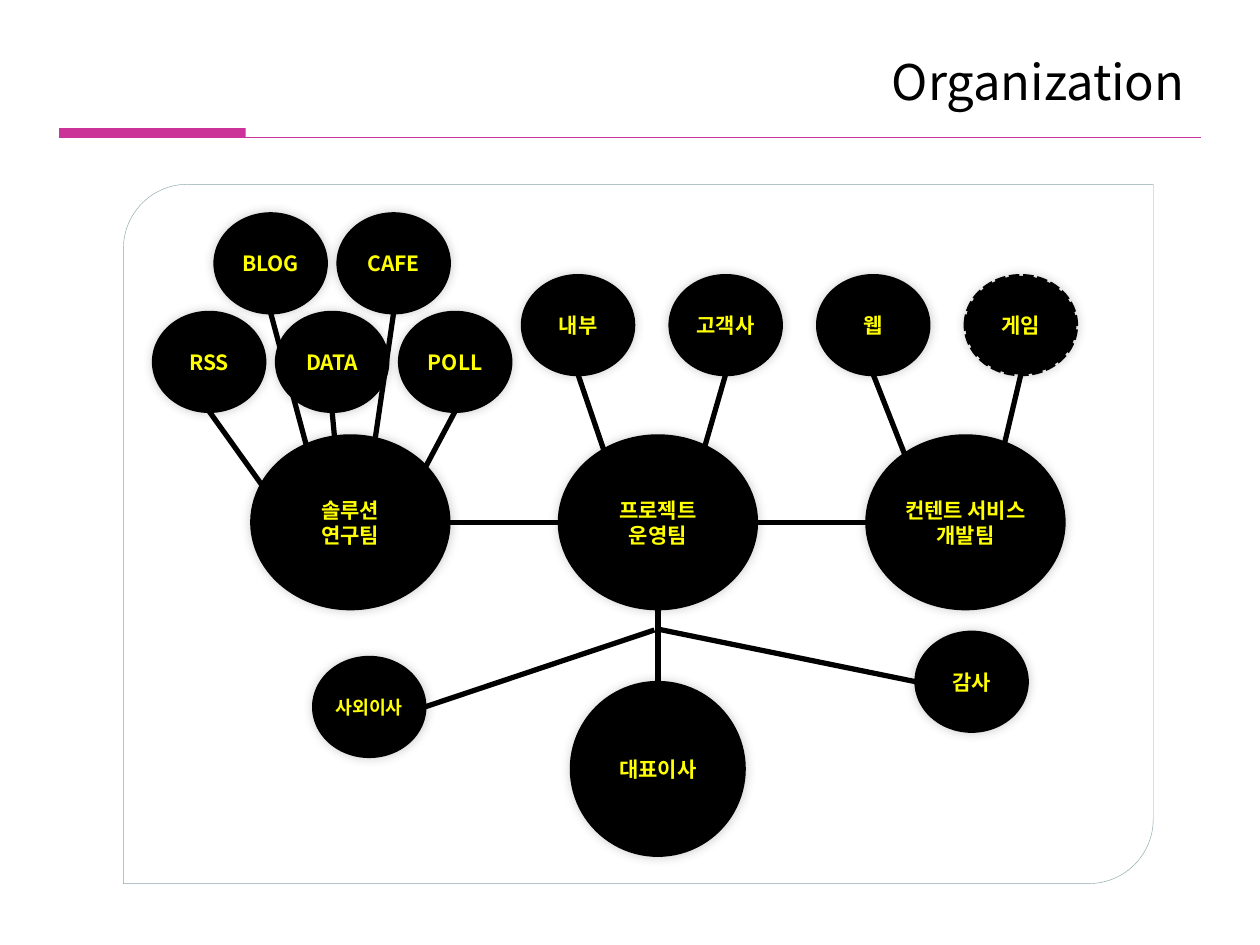
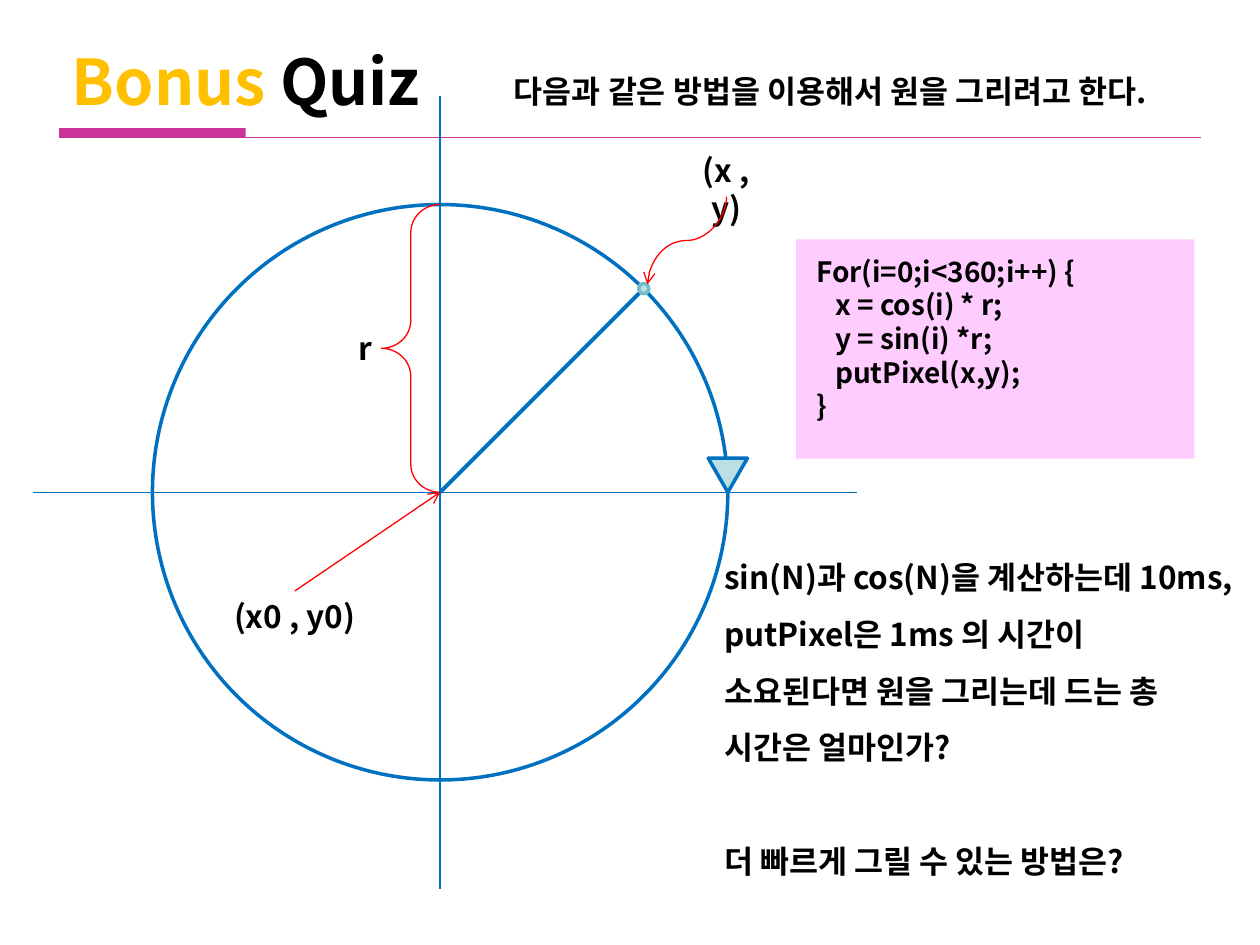
from lxml import etree
from pptx import Presentation
from pptx.dml.color import RGBColor
from pptx.enum.dml import MSO_LINE
from pptx.enum.shapes import MSO_CONNECTOR, MSO_SHAPE
from pptx.enum.text import MSO_ANCHOR, MSO_AUTO_SIZE, PP_ALIGN
from pptx.oxml.ns import qn
from pptx.util import Pt

OVAL, RECT = MSO_SHAPE.OVAL, MSO_SHAPE.RECTANGLE
STRAIGHT, CURVE = MSO_CONNECTOR.STRAIGHT, MSO_CONNECTOR.CURVE
LEFT, CENTER, RIGHT = PP_ALIGN.LEFT, PP_ALIGN.CENTER, PP_ALIGN.RIGHT
TOP, MIDDLE = MSO_ANCHOR.TOP, MSO_ANCHOR.MIDDLE
TITLE_ONLY = 5
FONT = "Noto Sans CJK KR"
COLORS = {
    "black": "000000", "white": "FFFFFF", "magenta": "CC3399", "panel": "8AA6A8",
    "yellow": "FFFF00", "blue": "0070C0", "pale": "BBE0E3", "teal": "72BFC5",
    "red": "FF0000", "pink": "FFCCFF", "gold": "FFC000",
}

# Organization: teams with their members, as (name, centre x, centre y)
TEAM_SIZE, MEMBER_SIZE, CHIEF_SIZE = (112.5, 98.6), (63.4, 56.4), (98.6, 98.6)
TEAM_X, TEAM_GAP, TEAM_Y = 200.2, 175.75, 298.5
SOLUTION_X, SOLUTION_GAP = 119.5, 70.3
BRANCH_X, BRANCH_GAP, BRANCH_Y = 330.3, 84.35, 185.8
TEAMS = [
    (["솔루션", "연구팀"], [
        (name, SOLUTION_X + step * SOLUTION_GAP, y) for name, step, y in [
            ("RSS", 0, 206.8), ("DATA", 1, 206.8), ("POLL", 2, 206.8),
            ("BLOG", 0.5, 150.5), ("CAFE", 1.5, 150.5)]]),
    (["프로젝트", "운영팀"], [
        (name, BRANCH_X + step * BRANCH_GAP, BRANCH_Y)
        for step, name in enumerate(["내부", "고객사"])]),
    (["컨텐트 서비스", "개발팀"], [
        (name, BRANCH_X + step * BRANCH_GAP, BRANCH_Y)
        for step, name in enumerate(["웹", "게임"], 2)]),
]
PLANNED = "게임"
CHIEF = ("대표이사", 375.9, 439.4)
OUTSIDE_DIRECTOR = ("사외이사", 211, 404)
AUDITOR = ("감사", 555.2, 389.6)
JUNCTION_Y = 359.5

# Quiz: the circle and the texts around it
CENTER_X, CENTER_Y, RADIUS = 251.5, 281.3, 164.4
POINT = (367.9, 164.9)
CODE = [("For(i=0;i<360;i++) {", 0), ("x = cos(i) * r;", 1), ("y = sin(i) *r;", 1),
        ("putPixel(x,y);", 1), ("}", 0)]
CODE_INDENT = 10.8
QUESTIONS = [
    "sin(N)과 cos(N)을 계산하는데 10ms, putPixel은 1ms 의 시간이 소요된다면 "
    "원을 그리는데 드는 총 시간은 얼마인가?",
    "더 빠르게 그릴 수 있는 방법은?",
]
LABELS = [
    (["다음과 같은 방법을 이용해서 원을 그리려고 한다."], (286.6, 37.4, 396, 51), {}),
    (["r"], (198, 184.3, 21, 29), {}),
    (["(x , y)"], (385.2, 82.8, 59.8, 29), {"align": CENTER}),
    (["(x0 , y0)"], (113, 337.7, 110.9, 29), {"align": CENTER}),
    (QUESTIONS, (406.8, 304.6, 306.7, 203.8), {"spacing": 1.5, "gap": 32.5}),
]


def color(name):
    return RGBColor.from_string(COLORS[name])


def write(shape, paragraphs, size=18, ink="black", bold=True, align=LEFT,
          anchor=TOP, wrap=True, spacing=None, gap=0):
    """Fill a shape with paragraphs: strings, or lists of (text, colour) spans."""
    frame = shape.text_frame
    frame.auto_size = MSO_AUTO_SIZE.NONE
    frame.word_wrap, frame.vertical_anchor = wrap, anchor
    for index, spans in enumerate(paragraphs):
        para = frame.add_paragraph() if index else frame.paragraphs[0]
        para.alignment, para.line_spacing = align, spacing
        para.space_before = Pt(gap if index else 0)
        for text, tint in [(spans, ink)] if isinstance(spans, str) else spans:
            span = para.add_run()
            span.text = text
            font = span.font
            font.size, font.bold, font.name = Pt(size), bold, FONT
            font.color.rgb = color(tint)
            etree.SubElement(font._element, qn("a:ea"), typeface=FONT)
    return frame


def add_shape(page, kind, box, fill=None, line=None, width=2):
    shape = page.shapes.add_shape(kind, *map(Pt, box))
    shape.shadow.inherit = False
    if fill:
        shape.fill.solid()
        shape.fill.fore_color.rgb = color(fill)
    else:
        shape.fill.background()
    if line:
        shape.line.color.rgb = color(line)
        shape.line.width = Pt(width)
    else:
        shape.line.fill.background()
    return shape


def add_line(page, start, end, ink, width, arrow=False, kind=STRAIGHT):
    line = page.shapes.add_connector(kind, *map(Pt, (*start, *end)))
    line.line.color.rgb = color(ink)
    line.line.width = Pt(width)
    if arrow:
        etree.SubElement(line.line._get_or_add_ln(), qn("a:tailEnd"), type="arrow")
    etree.SubElement(line._element.spPr, qn("a:effectLst"))
    return line


def add_page(deck, title, box, **style):
    page = deck.slides.add_slide(deck.slide_layouts[TITLE_ONLY])
    # Rule and accent band under the title
    add_line(page, (33.8, 78.6), (686.2, 78.6), "magenta", 0.25)
    add_shape(page, RECT, (33.8, 73.2, 106.6, 5.6), "magenta")
    heading = page.shapes.title
    heading.left, heading.top, heading.width, heading.height = map(Pt, box)
    write(heading, [title], **style)
    return page


def add_circle(page, lines, x, y, size, text_size=12):
    width, height = size
    circle = add_shape(page, OVAL, (x - width / 2, y - height / 2, width, height),
                       "black", "black")
    # Soft glow-like shadow
    effects = circle._element.spPr.find(qn("a:effectLst"))
    shadow = etree.SubElement(effects, qn("a:outerShdw"), blurRad=str(Pt(6)),
                              dist="0", dir="18900000", algn="ctr", rotWithShape="0")
    tint = etree.SubElement(shadow, qn("a:srgbClr"), val=COLORS["black"])
    etree.SubElement(tint, qn("a:alpha"), val="20000")
    write(circle, lines, size=text_size, ink="yellow", align=CENTER,
          anchor=MIDDLE, wrap=False)
    return circle


def build_organization(deck):
    page = add_page(deck, "Organization", (36, 21.6, 648, 49.7), size=28,
                    bold=False, align=RIGHT, anchor=MIDDLE)
    panel = add_shape(page, MSO_SHAPE.ROUND_2_DIAG_RECTANGLE,
                      (70.5, 105.3, 588.5, 399.6), "white", "panel", 0.25)
    panel.adjustments[0], panel.adjustments[1] = 0.092, 0

    # Lines come first, so that the circles cover their ends
    team_xs = [TEAM_X + index * TEAM_GAP for index in range(len(TEAMS))]
    team_foot = TEAM_Y + TEAM_SIZE[1] / 2
    hub_x, half = team_xs[1], MEMBER_SIZE[0] / 2
    links = [((x, y + MEMBER_SIZE[1] / 2), (team_x, team_foot))
             for team_x, (_, members) in zip(team_xs, TEAMS) for _, x, y in members]
    links += [((left + TEAM_SIZE[0] / 2, TEAM_Y), (right - TEAM_SIZE[0] / 2, TEAM_Y))
              for left, right in zip(team_xs, team_xs[1:])]
    links += [
        ((hub_x, team_foot), (hub_x, CHIEF[2] + CHIEF_SIZE[1] / 2)),
        ((AUDITOR[1] - half, AUDITOR[2]), (hub_x, JUNCTION_Y)),
        ((hub_x - 2, JUNCTION_Y + 0.5), (OUTSIDE_DIRECTOR[1] + half, OUTSIDE_DIRECTOR[2])),
    ]
    for start, end in links:
        add_line(page, start, end, "black", 3)

    # Members, teams and directors
    for team_x, (team, members) in zip(team_xs, TEAMS):
        for name, x, y in members:
            circle = add_circle(page, [name], x, y, MEMBER_SIZE)
            if name == PLANNED:
                circle.line.dash_style = MSO_LINE.SQUARE_DOT
        add_circle(page, team, team_x, TEAM_Y, TEAM_SIZE)
    for (name, x, y), size, text_size in [
            (CHIEF, CHIEF_SIZE, 12), (AUDITOR, MEMBER_SIZE, 12),
            (OUTSIDE_DIRECTOR, MEMBER_SIZE, 10.5)]:
        add_circle(page, [name], x, y, size, text_size)


def build_quiz(deck):
    page = add_page(deck, [("Bonus ", "gold"), ("Quiz", "black")],
                    (33.8, 20.9, 263.5, 51), size=36)

    # Circle, direction marker and axes
    center = (CENTER_X, CENTER_Y)
    circle_top = CENTER_Y - RADIUS
    add_shape(page, OVAL, (CENTER_X - RADIUS, circle_top, 2 * RADIUS, 2 * RADIUS),
              "white", "blue")
    marker = add_shape(page, MSO_SHAPE.ISOSCELES_TRIANGLE,
                       (CENTER_X + RADIUS - 11.2, CENTER_Y - 19.5, 22.4, 19.5),
                       "pale", "blue")
    marker.rotation = 180
    add_line(page, (CENTER_X, 54.7), (CENTER_X, 508.2), "blue", 0.75)
    add_line(page, (489.6, CENTER_Y), (18.7, CENTER_Y), "blue", 0.75)

    # Radius and the point on the circle
    brace = add_shape(page, MSO_SHAPE.LEFT_BRACE,
                      (CENTER_X - 33.5, circle_top, 33.5, RADIUS), None, "red", 0.75)
    brace.adjustments[0], brace.adjustments[1] = 0.478, 0.5
    add_line(page, center, POINT, "blue", 2.25)
    add_shape(page, OVAL, (POINT[0] - 2.9, POINT[1] - 2.9, 5.8, 5.8), "pale", "teal")

    # Code panel
    panel = add_shape(page, RECT, (455, 136.8, 227.5, 125.3), "pink")
    frame = write(panel, [text for text, _ in CODE], size=16)
    frame.margin_left, frame.margin_top = Pt(11.5), Pt(8.6)
    for para, (_, level) in zip(frame.paragraphs, CODE):
        para._p.get_or_add_pPr().set("marL", str(Pt(level * CODE_INDENT)))

    # Labels and their pointers
    for paragraphs, box, style in LABELS:
        write(page.shapes.add_textbox(*map(Pt, box)), paragraphs, **style)
    add_line(page, (168.5, 337.7), center, "red", 0.75, arrow=True)
    pointer = add_line(page, (367.5, 114.8), (417.7, 160), "red", 0.75,
                       arrow=True, kind=CURVE)
    pointer._element.spPr.find(qn("a:xfrm")).set("rot", "5400000")


def main():
    deck = Presentation()
    deck.slide_width, deck.slide_height = Pt(720), Pt(540)
    build_organization(deck)
    build_quiz(deck)
    deck.save("out.pptx")


if __name__ == "__main__":
    main()
